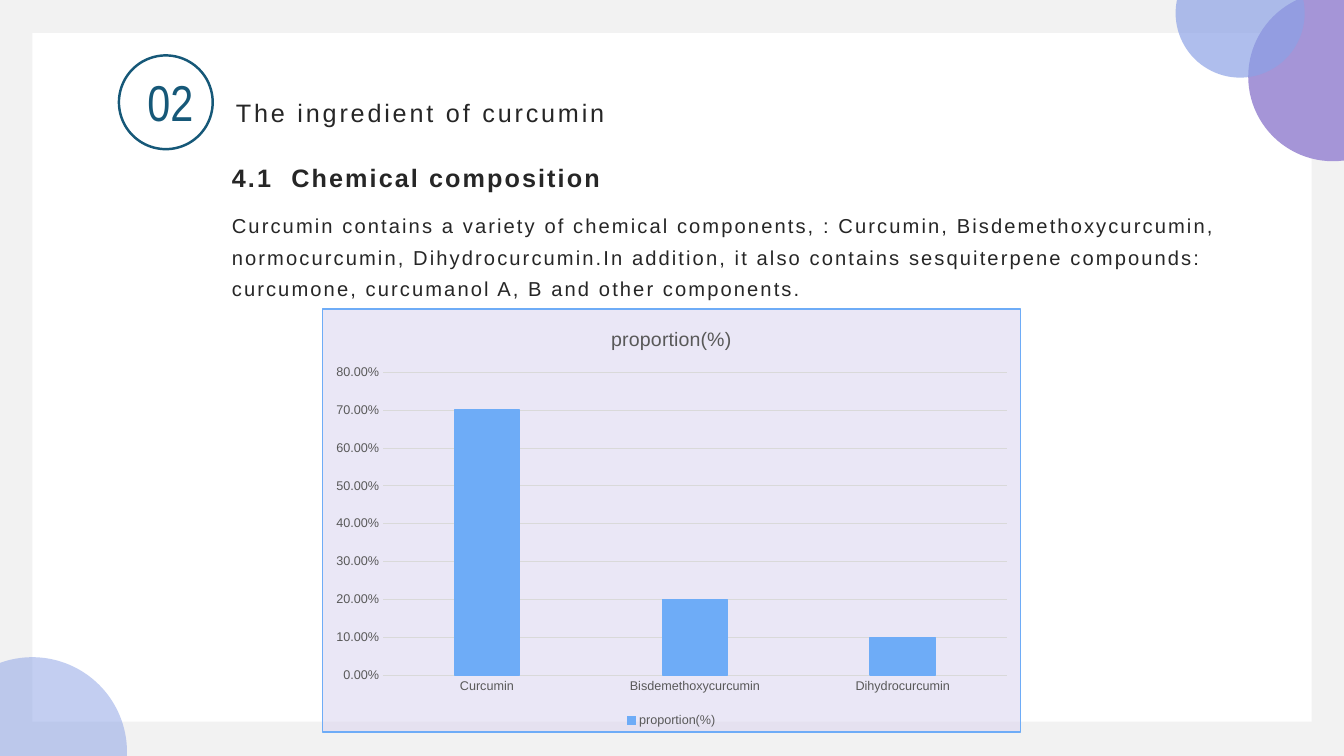
from math import cos, radians, sin
from lxml.etree import SubElement
from pptx import Presentation
from pptx.chart.data import CategoryChartData as Data
from pptx.dml.color import RGBColor as Rgb
from pptx.enum.chart import XL_CHART_TYPE as Kind, XL_LEGEND_POSITION as Spot, XL_TICK_MARK as Tick
from pptx.enum.shapes import MSO_SHAPE as Form
from pptx.enum.text import MSO_ANCHOR as Anchor, MSO_AUTO_SIZE as Fit, PP_ALIGN as Align
from pptx.oxml import parse_xml
from pptx.oxml.ns import nsdecls, qn
from pptx.util import Inches, Pt

WIDE, HIGH = 13.33, 7.5
HUES = {
    "back": "F2F2F2", "page": "FFFFFF", "plum": "A595D7", "blue": "8CA2E6",
    "teal": "165878", "ink": "262626", "gray": "595959", "grid": "D9D9D9",
    "bar": "6EACF7", "panel": "DBD5EF",
}


class Deck:
    def __init__(self):
        self.show = Presentation()
        self.show.slide_width = Inches(WIDE)
        self.show.slide_height = Inches(HIGH)
        self.slide = self.show.slides.add_slide(self.show.slide_layouts[5])
        self.shapes = self.slide.shapes
        self.paint(self.slide.background.fill, "back")

    def paint(self, fill, hue):
        fill.solid()
        fill.fore_color.rgb = Rgb.from_string(HUES[hue])

    def stroke(self, line, hue, size):
        self.paint(line.fill, hue)
        line.width = Pt(size)

    def type(self, font, size, hue, face="Arial", bold=False):
        font.size, font.name, font.bold = Pt(size), face, bold
        font.color.rgb = Rgb.from_string(HUES[hue])

    def shape(self, form, box, fill=None, line=None):
        item = self.shapes.add_shape(form, *map(Inches, box))
        item.shadow.inherit = False
        if fill:
            self.paint(item.fill, fill)
        else:
            item.fill.background()
        if line:
            self.stroke(item.line, line, 1.75)
        else:
            item.line.fill.background()

    def disc(self, x, y, radius, stops, ends, hue, alpha=100):
        turns = list(map(radians, stops))
        rim = [(x + radius * cos(turn), y + radius * sin(turn)) for turn in turns]
        dots = [(Inches(left), Inches(top)) for left, top in rim + ends]
        maker = self.shapes.build_freeform(*dots[0])
        maker.add_line_segments(dots[1:], close=True)
        item = maker.convert_to_shape()
        item.shadow.inherit = False
        self.paint(item.fill, hue)
        item.line.fill.background()
        tint = item.fill._xPr.find(".//" + qn("a:srgbClr"))
        SubElement(tint, qn("a:alpha"), val=str(alpha * 1000))
        edges = list(item._element.iter(qn("a:lnTo")))
        size = str(Inches(radius))
        for edge, start, stop in zip(edges, stops, stops[1:]):
            swing, sweep = round(start % 360 * 60000), round((stop - start) * 60000)
            edge.addprevious(parse_xml(
                f'<a:arcTo {nsdecls("a")} wR="{size}" hR="{size}" '
                f'stAng="{swing}" swAng="{sweep}"/>'
            ))
            edge.getparent().remove(edge)

    def frame(self, item, box, pads, anchor=Anchor.TOP):
        item.left, item.top, item.width, item.height = map(Inches, box)
        body = item.text_frame
        body.word_wrap, body.auto_size = True, Fit.NONE
        body.vertical_anchor = anchor
        sides = map(Inches, pads)
        body.margin_left, body.margin_top, body.margin_right, body.margin_bottom = sides
        return body

    def text(self, para, words, size, hue, face="Arial", bold=False, track=0):
        run = para.add_run()
        run.text = words
        self.type(run.font, size, hue, face, bold)
        if track:
            run.font._element.set("spc", str(int(track * 100)))

    def title(self, words, box):
        item = self.shapes.title
        self.shapes._spTree.append(item._element)
        body = self.frame(item, box, (0.21, 0.04, 0.08, 0.04), Anchor.MIDDLE)
        para = body.paragraphs[0]
        para.alignment = Align.LEFT
        self.text(para, words, 18, "ink", track=2)

    def label(self, words, box):
        item = self.shapes.add_textbox(*map(Inches, box))
        para = self.frame(item, box, (0.1, 0.05, 0.1, 0.05)).paragraphs[0]
        para.alignment = Align.CENTER
        self.text(para, words, 36, "teal", "Arial Narrow")

    def prose(self, head, words, box):
        item = self.shapes.add_textbox(*map(Inches, box))
        body = self.frame(item, box, (0.11, 0, 0.09, 0))
        first, second = body.paragraphs[0], body.add_paragraph()
        stops = SubElement(first._p.get_or_add_pPr(), qn("a:tabLst"))
        SubElement(stops, qn("a:tab"), pos=str(Inches(0.59)), algn="l")
        for para, space in (first, 1.1), (second, 1.3):
            para.line_spacing, para.space_after = space, Pt(10)
        self.text(first, head, 18, "ink", bold=True, track=1.5)
        self.text(second, words, 14.4, "ink", track=1.5)

    def chart(self, name, rows, box):
        data = Data(number_format="0.00%")
        data.categories = list(rows)
        data.add_series(name, list(rows.values()))
        item = self.shapes.add_chart(Kind.COLUMN_CLUSTERED, *map(Inches, box), data)
        chart = item.chart
        self.type(chart.font, 10, "gray")
        chart.has_title = True
        self.text(chart.chart_title.text_frame.paragraphs[0], name, 14, "gray")
        chart.chart_title.include_in_layout = False
        chart.has_legend = True
        chart.legend.position = Spot.BOTTOM
        chart.legend.include_in_layout = False
        self.type(chart.legend.font, 9, "gray")
        cats, vals = chart.category_axis, chart.value_axis
        for axis in cats, vals:
            axis.major_tick_mark = axis.minor_tick_mark = Tick.NONE
            self.type(axis.tick_labels.font, 9, "gray")
        self.stroke(cats.format.line, "grid", 0.75)
        vals.format.line.fill.background()
        self.stroke(vals.major_gridlines.format.line, "grid", 0.75)
        vals.minimum_scale, vals.maximum_scale, vals.major_unit = 0, 0.8, 0.1
        vals.tick_labels.number_format = "0.00%"
        vals.tick_labels.number_format_is_linked = False
        plot = chart.plots[0]
        plot.vary_by_categories = False
        plot.gap_width, plot.overlap = 219, -27
        bars = plot.series[0]
        bars.invert_if_negative = False
        self.paint(bars.format.fill, "bar")
        self.stroke(bars.format.line, "bar", 1)
        panel = parse_xml(
            f'<c:spPr {nsdecls("c", "a")}><a:solidFill><a:srgbClr val="{HUES["panel"]}">'
            f'<a:alpha val="56000"/></a:srgbClr></a:solidFill><a:ln w="{Pt(1)}"><a:solidFill>'
            f'<a:srgbClr val="{HUES["bar"]}"/></a:solidFill></a:ln></c:spPr>'
        )
        chart._chartSpace.find(qn("c:chart")).addnext(panel)


def main():
    deck = Deck()
    deck.shape(Form.RECTANGLE, (0.32, 0.33, 12.69, 6.83), fill="page")
    deck.disc(13.22, 0.76, 0.84, (82.5, 90, 180, 244.8), [(WIDE, 0)], "plum")
    deck.disc(12.3, 0.13, 0.64, (-11.7, 0, 90, 180, 191.7), [], "blue", 69)
    deck.disc(0.32, 7.46, 0.94, (-109.9, -90, 0, 2.4), [(0, HIGH)], "blue", 52)
    deck.prose(
        "4.1\tChemical composition",
        "Curcumin contains a variety of chemical components, : Curcumin, "
        "Bisdemethoxycurcumin, normocurcumin, Dihydrocurcumin.In addition, it also "
        "contains sesquiterpene compounds: curcumone, curcumanol A, B and other components.",
        (2.19, 1.58, 10.53, 2.26),
    )
    deck.title("The ingredient of curcumin", (2.13, 0.88, 10.24, 0.48))
    deck.shape(Form.OVAL, (1.18, 0.55, 0.93, 0.93), line="teal")
    deck.label("02", (1.14, 0.66, 1.1, 0.71))
    shares = {"Curcumin": 0.7, "Bisdemethoxycurcumin": 0.2, "Dihydrocurcumin": 0.1}
    deck.chart("proportion(%)", shares, (3.19, 3.06, 6.94, 4.21))
    deck.show.save("out.pptx")


if __name__ == "__main__":
    main()
